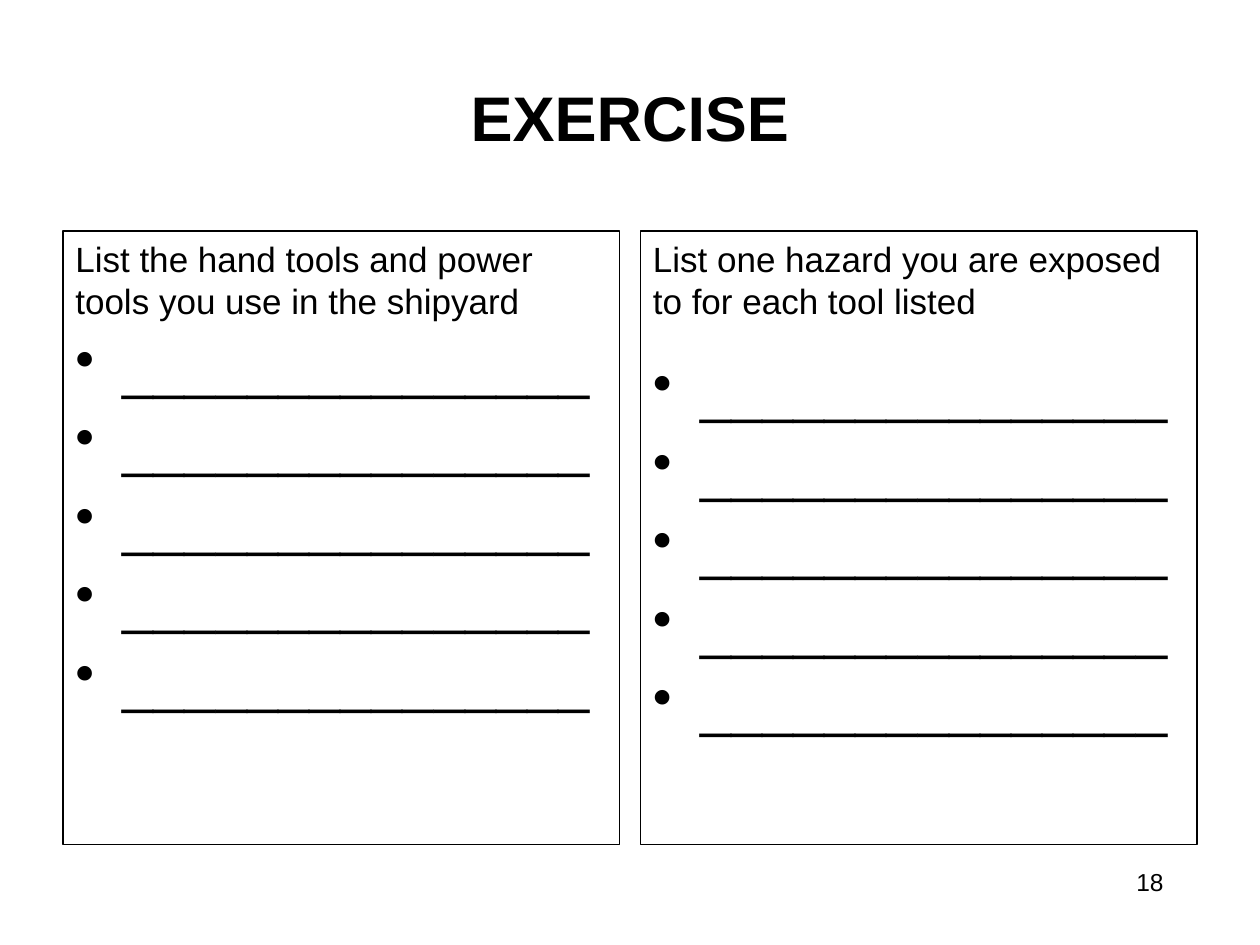
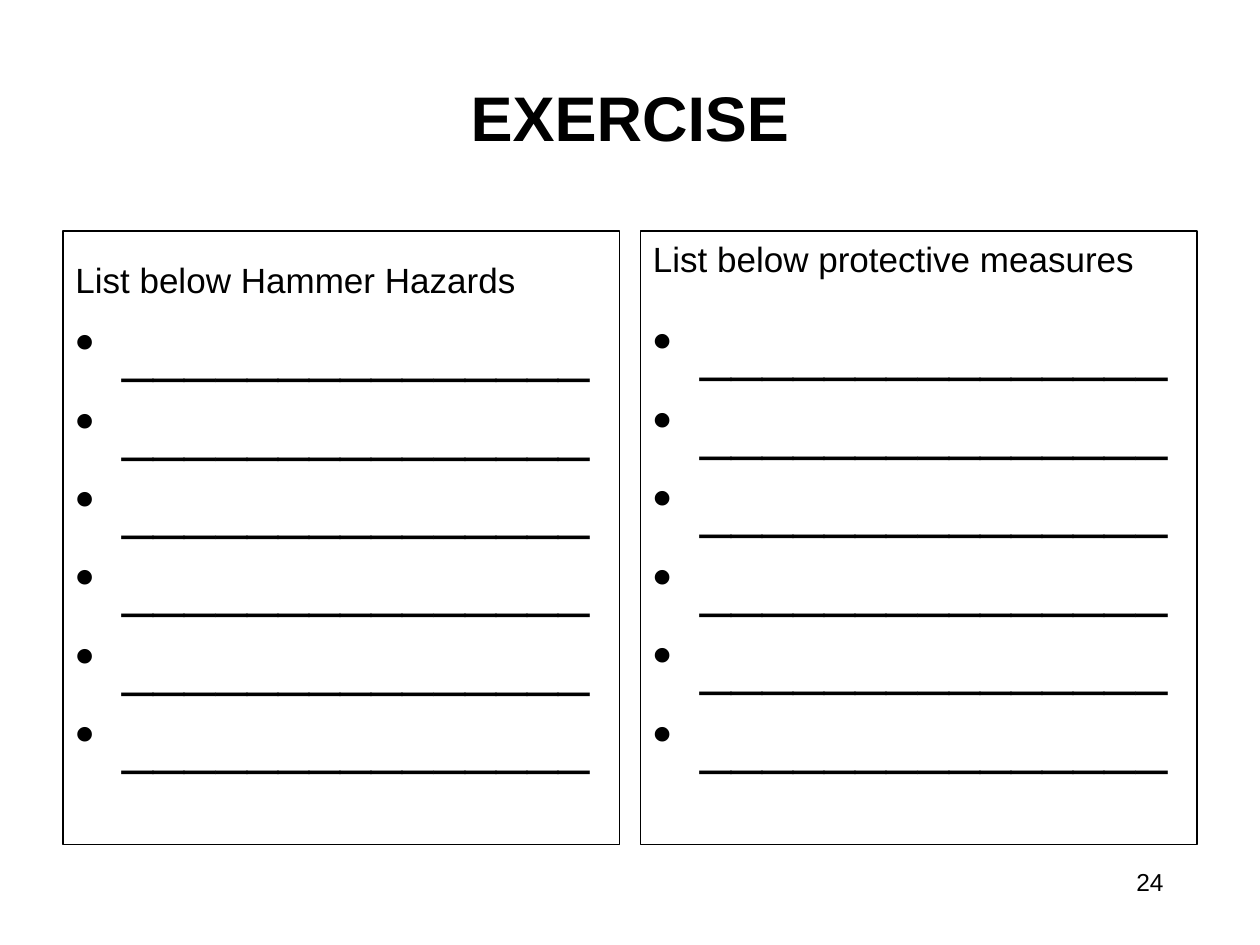
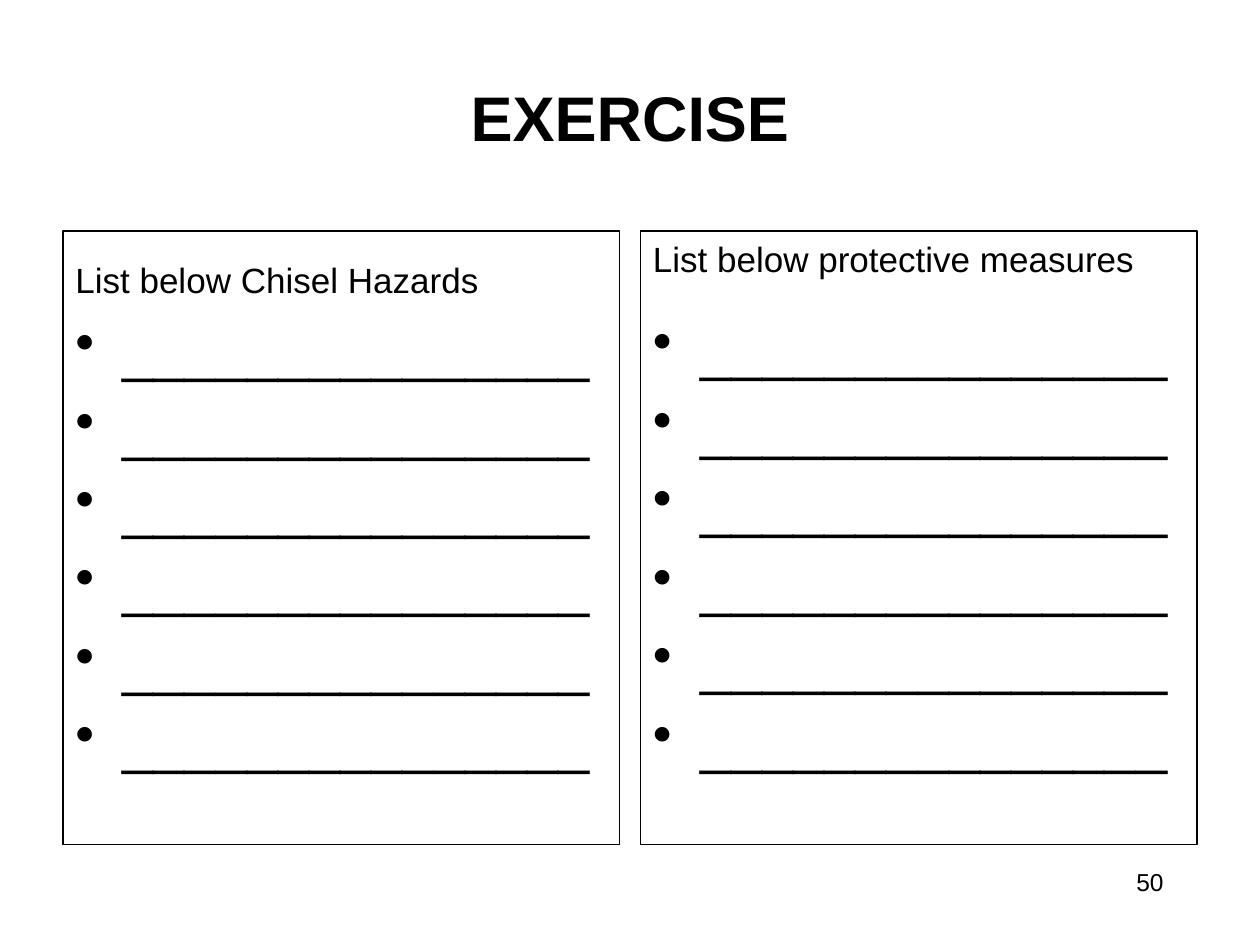
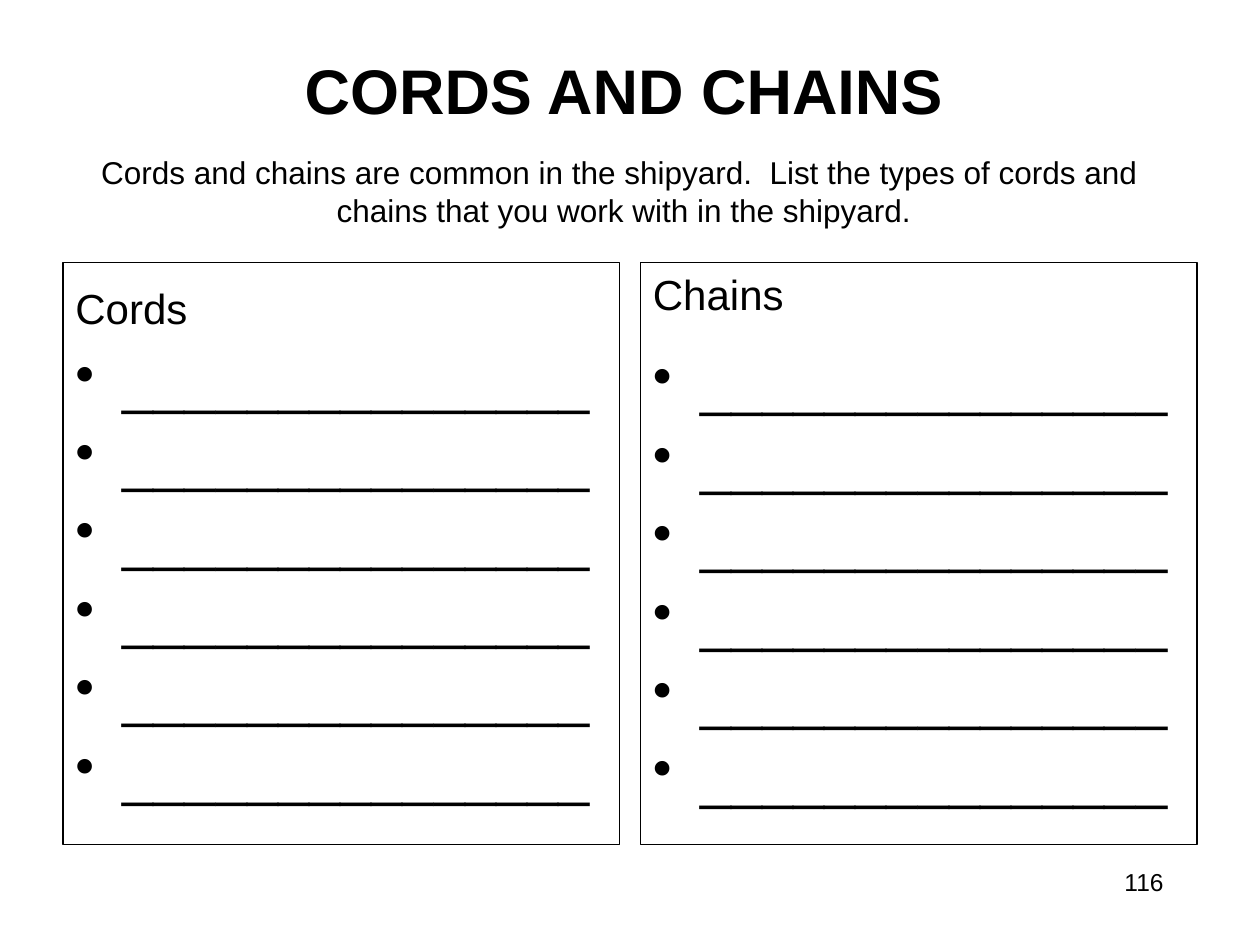
from pptx import Presentation
from pptx.dml.color import RGBColor
from pptx.enum import shapes, text
from pptx.oxml import parse_xml
from pptx.oxml.ns import nsdecls
from pptx.util import Pt

BLACK = RGBColor(0, 0, 0)
FONT = "Arial"
LEFT, RIGHT, BOTTOM, GAP = 36, 684, 482.5, 12
BLANK = "_" * 15
BLANK_SIZE = 32
INDENT = 27
SPACE = 6.4
INSET = 3.6
TITLE_BOX = (36, 21.6, 648, 90)
NUMBER_BOX = (516, 492, 156, 37.5)


def add_run(p, words, size, bold=False):
    r = p.add_run()
    r.text = words
    r.font.name = FONT
    r.font.size = Pt(size)
    r.font.bold = bold
    r.font.color.rgb = BLACK


def add_title(slide, box, words):
    sp = slide.shapes.title
    sp.left, sp.top, sp.width, sp.height = map(Pt, box)
    tf = sp.text_frame
    tf.vertical_anchor = text.MSO_ANCHOR.MIDDLE
    p = tf.paragraphs[0]
    p.alignment = text.PP_ALIGN.CENTER
    add_run(p, words, 36, bold=True)


def add_text(slide, box, lines, size, align, wrap=True):
    tf = slide.shapes.add_textbox(*map(Pt, box)).text_frame
    tf.word_wrap = wrap
    for i, words in enumerate(lines):
        p = tf.add_paragraph() if i else tf.paragraphs[0]
        p.alignment = align
        add_run(p, words, size)


def add_bullet(p):
    pPr = p._p.get_or_add_pPr()
    pPr.set("marL", str(Pt(INDENT)))
    pPr.set("indent", str(-Pt(INDENT)))
    pPr.append(parse_xml(f'<a:buChar {nsdecls("a")} char="•"/>'))


def add_panel(slide, box, heading, size, count, drop, list_space):
    sp = slide.shapes.add_shape(shapes.MSO_SHAPE.RECTANGLE, *map(Pt, box))
    sp.shadow.inherit = False
    sp.fill.background()
    sp.line.color.rgb = BLACK
    sp.line.width = Pt(0.75)
    tf = sp.text_frame
    tf.word_wrap = True
    tf.vertical_anchor = text.MSO_ANCHOR.TOP
    tf.margin_top = Pt(INSET + drop)
    p = tf.paragraphs[0]
    p.alignment = text.PP_ALIGN.LEFT
    add_run(p, heading, size)
    for i in range(count):
        p = tf.add_paragraph()
        add_bullet(p)
        p.alignment = text.PP_ALIGN.LEFT
        p.space_before = Pt(SPACE if i else list_space)
        add_run(p, BLANK, BLANK_SIZE)


def add_exercise(prs, number, headings, title="EXERCISE", title_box=TITLE_BOX,
                 top=132, size=20, count=6, lowered=True, right_space=20.4):
    slide = prs.slides.add_slide(prs.slide_layouts[5])
    add_title(slide, title_box, title)
    drop = BLANK_SIZE - size if lowered else 0
    width = (RIGHT - LEFT - GAP) / 2
    columns = [(drop, SPACE + 0.2 * drop), (0, right_space)]
    for i, (heading, (shift, space)) in enumerate(zip(headings, columns)):
        box = (LEFT + i * (width + GAP), top, width, BOTTOM - top)
        add_panel(slide, box, heading, size, count, shift, space)
    add_text(slide, NUMBER_BOX, [number], 14, text.PP_ALIGN.RIGHT)
    return slide


def main():
    prs = Presentation()
    prs.slide_width, prs.slide_height = Pt(720), Pt(540)
    add_exercise(prs, "18",
                 ["List the hand tools and power tools you use in the shipyard",
                  "List one hazard you are exposed to for each tool listed"],
                 count=5, lowered=False)
    for number, tool in [("24", "Hammer"), ("50", "Chisel")]:
        add_exercise(prs, number, [f"List below {tool} Hazards",
                                   "List below protective measures"])
    slide = add_exercise(prs, "116", ["Cords", "Chains"],
                         title="CORDS AND CHAINS",
                         title_box=(32.4, 6, 648, 90),
                         top=150, size=24, right_space=17.6)
    add_text(slide, (48, 84, 617, 51),
             ["Cords and chains are common in the shipyard.  "
              "List the types of cords and ",
              "chains that you work with in the shipyard."],
             18, text.PP_ALIGN.CENTER, wrap=False)
    prs.save("out.pptx")


if __name__ == "__main__":
    main()
